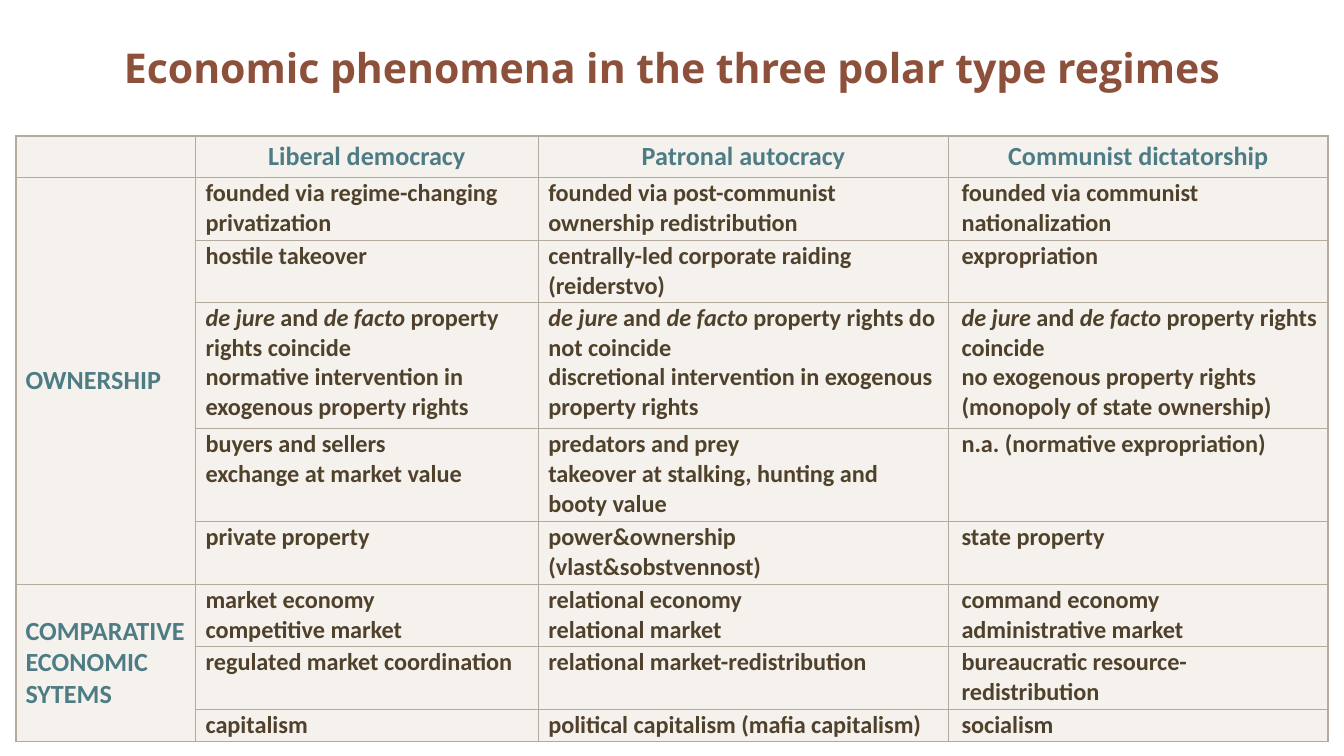
from lxml import etree
from pptx import Presentation
from pptx.dml.color import RGBColor
from pptx.enum.text import MSO_ANCHOR, PP_ALIGN
from pptx.oxml.ns import qn
from pptx.util import Pt

PX = 4572  # 200 px to the inch
SLIDE_WIDTH, SLIDE_HEIGHT = 2000, 1125
MIDDLE, TOP = MSO_ANCHOR.MIDDLE, MSO_ANCHOR.TOP
CENTER, LEFT = PP_ALIGN.CENTER, PP_ALIGN.LEFT

COLORS = {
    "title": "8D503B",
    "heading": "4D7C85",
    "body": "50412B",
    "cell": "EFEAE4",
    "border": "B3A99D",
}
CELL_OPACITY = 60
OUTER_LINE, INNER_LINE = 1, 0.5

SIDE_MARGIN, TABLE_TOP = 24, 202
COLUMN_WIDTHS = [267, 510, 611, 564]
ROW_HEIGHTS = [62, 94, 92, 188, 138, 94, 92, 94, 48]

REGIMES = ["Liberal democracy", "Patronal autocracy", "Communist dictatorship"]

# Each cell is a list of paragraphs; *stars* mark italics, \n a line break.
SECTIONS = [
    ("OWNERSHIP", [
        [["founded via regime-changing privatization"],
         ["founded via post-communist ownership redistribution"],
         ["founded via communist nationalization"]],
        [["hostile takeover"],
         ["centrally-led corporate raiding (reiderstvo)"],
         ["expropriation"]],
        [["*de jure *and *de facto* property rights coincide",
          "normative intervention in exogenous property rights"],
         ["*de jure *and *de facto* property rights do not coincide",
          "discretional intervention in exogenous property rights"],
         ["*de jure *and *de facto* property rights coincide",
          "no exogenous property rights (monopoly of state ownership)"]],
        [["buyers and sellers", "exchange at market value"],
         ["predators and prey", "takeover at stalking, hunting and booty value"],
         ["n.a. (normative expropriation)"]],
        [["private property"],
         ["power&ownership", "(vlast&sobstvennost)"],
         ["state property"]],
    ]),
    ("COMPARATIVE ECONOMIC SYTEMS", [
        [["market economy\ncompetitive market"],
         ["relational economy\nrelational market"],
         ["command economy\nadministrative market"]],
        [["regulated market coordination"],
         ["relational market-redistribution"],
         ["bureaucratic resource-redistribution"]],
        [["capitalism"],
         ["political capitalism (mafia capitalism)"],
         ["socialism"]],
    ]),
]


def style_paragraph(paragraph, font_name, size, color, align=LEFT, indent=0):
    paragraph.alignment = align
    if indent:
        properties = paragraph._p.get_or_add_pPr()
        properties.set("marL", str(indent * PX))
        properties.set("indent", "0")
    font = paragraph.font
    font.name, font.size, font.bold = font_name, Pt(size), True
    font.color.rgb = RGBColor.from_string(COLORS[color])


def add_marked_runs(paragraph, text):
    """Write text with *italic* parts and \\n line breaks."""
    for line_index, line in enumerate(text.split("\n")):
        if line_index:
            paragraph.add_line_break()
        for part_index, part in enumerate(line.split("*")):
            if part:
                run = paragraph.add_run()
                run.text = part
                if part_index % 2:
                    run.font.italic = True


def fill_cell(cell, paragraphs, size, color, margins, anchor=MIDDLE, align=LEFT, indent=0):
    """Write a cell; margins are left, top, right, bottom in px."""
    cell.margin_left, cell.margin_top, cell.margin_right, cell.margin_bottom = (
        margin * PX for margin in margins)
    cell.vertical_anchor = anchor
    frame = cell.text_frame
    for index, text in enumerate(paragraphs):
        paragraph = frame.add_paragraph() if index else frame.paragraphs[0]
        style_paragraph(paragraph, "Calibri", size, color, align, indent)
        add_marked_runs(paragraph, text)


def shade_cell(cell):
    cell.fill.solid()
    cell.fill.fore_color.rgb = RGBColor.from_string(COLORS["cell"])
    tint = cell._tc.tcPr.find(".//" + qn("a:srgbClr"))
    etree.SubElement(tint, qn("a:alpha")).set("val", str(CELL_OPACITY * 1000))


def border_cell(cell, outer_sides):
    """Line all four sides, heavier on the table's outer edge."""
    properties = cell._tc.get_or_add_tcPr()
    for index, side in enumerate("LRTB"):
        width = OUTER_LINE if side in outer_sides else INNER_LINE
        line = etree.Element(qn("a:ln" + side), w=str(Pt(width)))
        solid = etree.SubElement(line, qn("a:solidFill"))
        etree.SubElement(solid, qn("a:srgbClr")).set("val", COLORS["border"])
        properties.insert(index, line)


def finish_cells(table):
    last_row, last_column = len(ROW_HEIGHTS) - 1, len(COLUMN_WIDTHS) - 1
    for row in range(last_row + 1):
        for column in range(last_column + 1):
            cell = table.cell(row, column)
            bottom_row = row + (cell.span_height - 1 if cell.is_merge_origin else 0)
            edges = {"L": column == 0, "R": column == last_column,
                     "T": row == 0, "B": bottom_row == last_row}
            shade_cell(cell)
            border_cell(cell, [side for side, outer in edges.items() if outer])


def add_title(slide, text):
    width = SLIDE_WIDTH - 2 * SIDE_MARGIN
    box = slide.shapes.add_textbox(SIDE_MARGIN * PX, 0, width * PX, 200 * PX)
    frame = box.text_frame
    frame.word_wrap = True
    frame.vertical_anchor = MIDDLE
    paragraph = frame.paragraphs[0]
    style_paragraph(paragraph, "Open Sans", 22, "title", CENTER)
    paragraph.add_run().text = text


def add_regime_table(slide):
    frame = slide.shapes.add_table(
        len(ROW_HEIGHTS), len(COLUMN_WIDTHS), SIDE_MARGIN * PX, TABLE_TOP * PX,
        sum(COLUMN_WIDTHS) * PX, sum(ROW_HEIGHTS) * PX)
    table = frame.table
    table.first_row = table.horz_banding = False
    for column, width in zip(table.columns, COLUMN_WIDTHS):
        column.width = width * PX
    for row, height in zip(table.rows, ROW_HEIGHTS):
        row.height = height * PX

    for column, regime in enumerate(["", *REGIMES]):
        fill_cell(table.cell(0, column), [regime], 14, "heading", (8, 1, 8, 0), align=CENTER)

    row = 1
    for section, phenomena in SECTIONS:
        section_cell = table.cell(row, 0)
        section_cell.merge(table.cell(row + len(phenomena) - 1, 0))
        fill_cell(section_cell, [section], 14, "heading", (0, 0, 0, 0), indent=14)
        for phenomenon in phenomena:
            for column, paragraphs in enumerate(phenomenon, start=1):
                indent = 4 if column == len(REGIMES) else 0
                fill_cell(table.cell(row, column), paragraphs, 13, "body",
                          (15, 2, 15, 0), TOP, indent=indent)
            row += 1
    finish_cells(table)


def main():
    presentation = Presentation()
    presentation.slide_width = SLIDE_WIDTH * PX
    presentation.slide_height = SLIDE_HEIGHT * PX
    slide = presentation.slides.add_slide(presentation.slide_layouts[6])
    add_title(slide, "Economic phenomena in the three polar type regimes")
    add_regime_table(slide)
    presentation.save("out.pptx")


if __name__ == "__main__":
    main()
